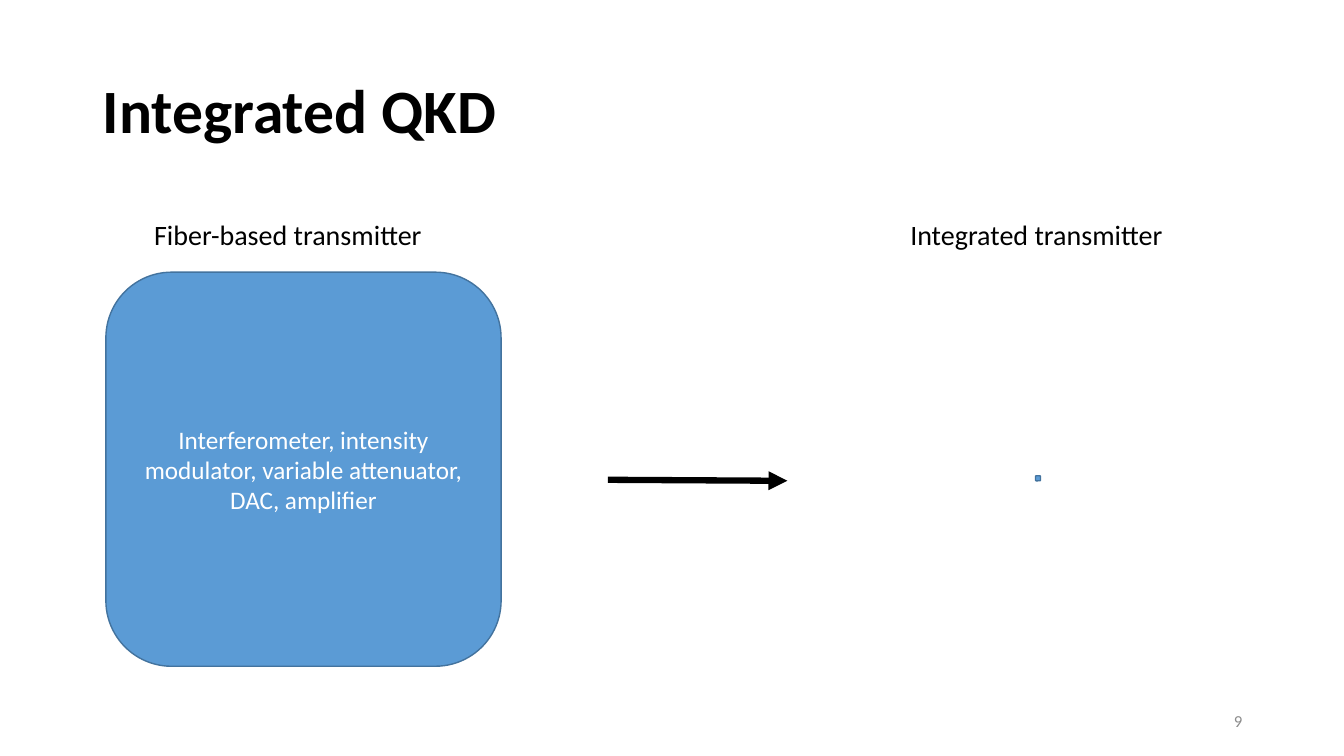
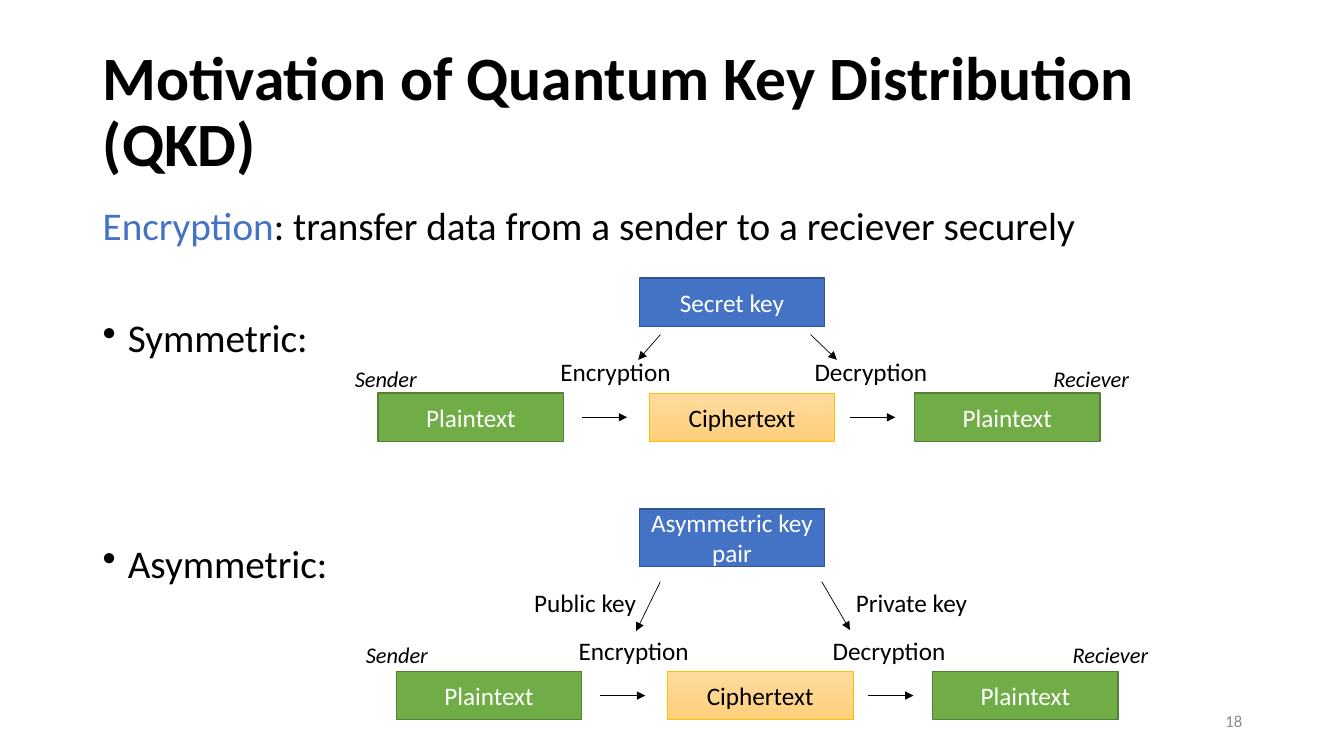
import lxml.etree
import pptx
import pptx.dml.color
import pptx.enum.shapes
import pptx.enum.text
import pptx.oxml.ns
import pptx.util

RGBColor = pptx.dml.color.RGBColor
Shape = pptx.enum.shapes.MSO_SHAPE
Align = pptx.enum.text.PP_ALIGN
Anchor = pptx.enum.text.MSO_ANCHOR
qn = pptx.oxml.ns.qn

BLACK = RGBColor(0x00, 0x00, 0x00)
WHITE = RGBColor(0xFF, 0xFF, 0xFF)
GRAY = RGBColor(0x8C, 0x8C, 0x8C)
SKY = RGBColor(0x5B, 0x9B, 0xD5)
SKY_EDGE = RGBColor(0x43, 0x73, 0x9E)
BLUE = RGBColor(0x44, 0x72, 0xC4)
BLUE_EDGE = RGBColor(0x32, 0x54, 0x91)
GREEN = RGBColor(0x70, 0xAD, 0x47)
GREEN_EDGE = RGBColor(0x53, 0x80, 0x35)
GOLD_TOP = RGBColor(0xFF, 0xDB, 0x9E)
GOLD_BOTTOM = RGBColor(0xFF, 0xD0, 0x7C)
GOLD_EDGE = RGBColor(0xFF, 0xC0, 0x00)

FONT = "Calibri"
TITLE_ONLY = 5
EMU_PER_PX = 9144
BOX_WIDTH = 184
BOX_HEIGHT = 48


def px(*lengths):
    return [pptx.util.Emu(length * EMU_PER_PX) for length in lengths]


def write(paragraph, text, size=18, color=BLACK, bold=False, italic=False, align=Align.LEFT):
    paragraph.alignment = align
    run = paragraph.add_run()
    run.text = text
    run.font.name = FONT
    run.font.size = pptx.util.Pt(size)
    run.font.color.rgb = color
    run.font.bold = bold
    run.font.italic = italic


def add_label(slide, text, left, top, width=135, height=40, anchor=Anchor.TOP, **text_format):
    frame = slide.shapes.add_textbox(*px(left, top, width, height)).text_frame
    frame.word_wrap = True
    frame.vertical_anchor = anchor
    write(frame.paragraphs[0], text, **text_format)


def add_box(slide, left, top, width=BOX_WIDTH, height=BOX_HEIGHT, text="", kind=Shape.RECTANGLE,
            fill=(BLUE,), edge=BLUE_EDGE, edge_width=1, color=WHITE):
    shape = slide.shapes.add_shape(kind, *px(left, top, width, height))
    shape.shadow.inherit = False
    if len(fill) == 1:
        shape.fill.solid()
        shape.fill.fore_color.rgb = fill[0]
    else:
        shape.fill.gradient()
        shape.fill.gradient_angle = 270
        for stop, stop_color in zip(shape.fill.gradient_stops, fill):
            stop.color.rgb = stop_color
    shape.line.color.rgb = edge
    shape.line.width = pptx.util.Pt(edge_width)
    if text:
        frame = shape.text_frame
        frame.word_wrap = True
        frame.vertical_anchor = Anchor.MIDDLE
        write(frame.paragraphs[0], text, color=color, align=Align.CENTER)


def add_arrow(slide, start, end, width=0.5):
    straight = pptx.enum.shapes.MSO_CONNECTOR.STRAIGHT
    connector = slide.shapes.add_connector(straight, *px(*start, *end))
    connector.line.color.rgb = BLACK
    connector.line.width = pptx.util.Pt(width)
    lxml.etree.SubElement(connector.line._get_or_add_ln(), qn("a:tailEnd"), type="triangle")
    lxml.etree.SubElement(connector._element.spPr, qn("a:effectLst"))


def add_slide(presentation, title, number):
    slide = presentation.slides.add_slide(presentation.slide_layouts[TITLE_ONLY])
    shape = slide.shapes.title
    shape.left, shape.top, shape.width, shape.height = px(92, 40, 1150, 145)
    frame = shape.text_frame
    frame.word_wrap = True
    frame.auto_size = pptx.enum.text.MSO_AUTO_SIZE.NONE
    frame.vertical_anchor = Anchor.MIDDLE
    paragraph = frame.paragraphs[0]
    paragraph.line_spacing = 0.9
    write(paragraph, title, size=44, bold=True)
    add_label(slide, number, 942, 695, width=300, anchor=Anchor.MIDDLE,
              size=12, color=GRAY, align=Align.RIGHT)
    return slide


def add_outline(slide):
    frame = slide.shapes.add_textbox(*px(92, 200, 1150, 476)).text_frame
    frame.word_wrap = True
    introduction = frame.paragraphs[0]
    introduction.line_spacing = 0.9
    write(introduction, "Encryption", size=28, color=BLUE)
    write(introduction, ": transfer data from a sender to a reciever securely", size=28)
    indent = px(25)[0]
    for text, space_before in (("Symmetric:", 50), ("Asymmetric:", 131)):
        paragraph = frame.add_paragraph()
        paragraph.line_spacing = 0.9
        paragraph.space_before = pptx.util.Pt(space_before)
        properties = paragraph._p.get_or_add_pPr()
        properties.set("marL", str(indent))
        properties.set("indent", str(-indent))
        lxml.etree.SubElement(properties, qn("a:buChar"), char="•")
        write(paragraph, text, size=28)


def add_cipher_row(slide, left, top, sender_left, reciever_left, role_top):
    for offset in (0, 532):
        add_box(slide, left + offset, top, text="Plaintext", fill=(GREEN,), edge=GREEN_EDGE)
    add_box(slide, left + 269, top, text="Ciphertext", fill=(GOLD_TOP, GOLD_BOTTOM),
            edge=GOLD_EDGE, edge_width=0.5, color=BLACK)
    middle = top + BOX_HEIGHT // 2
    for text, label_offset, arrow_offset in (("Encryption", 171, 202), ("Decryption", 423, 468)):
        add_label(slide, text, left + label_offset, top - 41)
        arrow_left = left + arrow_offset
        add_arrow(slide, (arrow_left, middle), (arrow_left + 45, middle))
    for text, role_left in (("Sender", sender_left), ("Reciever", reciever_left)):
        add_label(slide, text, role_left, role_top, height=37, size=16, italic=True)


def build_integrated(presentation):
    slide = add_slide(presentation, "Integrated QKD", "9")
    add_arrow(slide, (603, 476), (781, 477), width=4.5)
    for text, left in (("Fiber-based transmitter", 143), ("Integrated transmitter", 893)):
        add_label(slide, text, left, 211, width=300, height=44, size=20)
    transmitter = {"kind": Shape.ROUNDED_RECTANGLE, "fill": (SKY,), "edge": SKY_EDGE}
    add_box(slide, 105, 270, 392, 391, **transmitter,
            text="Interferometer, intensity modulator, variable attenuator, DAC, amplifier")
    add_box(slide, 1027, 472, 5, 5, **transmitter)


def build_motivation(presentation):
    slide = add_slide(presentation, "Motivation of Quantum Key Distribution (QKD)", "18")
    add_outline(slide)

    add_box(slide, 634, 276, text="Secret key")
    add_arrow(slide, (655, 332), (633, 357))
    add_arrow(slide, (804, 332), (830, 357))
    add_cipher_row(slide, 375, 390, sender_left=342, reciever_left=1035, role_top=357)

    add_box(slide, 634, 505, height=57, text="Asymmetric key pair")
    add_arrow(slide, (655, 577), (631, 626))
    add_arrow(slide, (815, 577), (843, 625))
    add_label(slide, "Public key", 520, 578)
    add_label(slide, "Private key", 839, 578)
    add_cipher_row(slide, 393, 666, sender_left=353, reciever_left=1054, role_top=631)


def main():
    presentation = pptx.Presentation()
    presentation.slide_width, presentation.slide_height = px(1333, 750)
    build_integrated(presentation)
    build_motivation(presentation)
    presentation.save("out.pptx")


if __name__ == "__main__":
    main()
